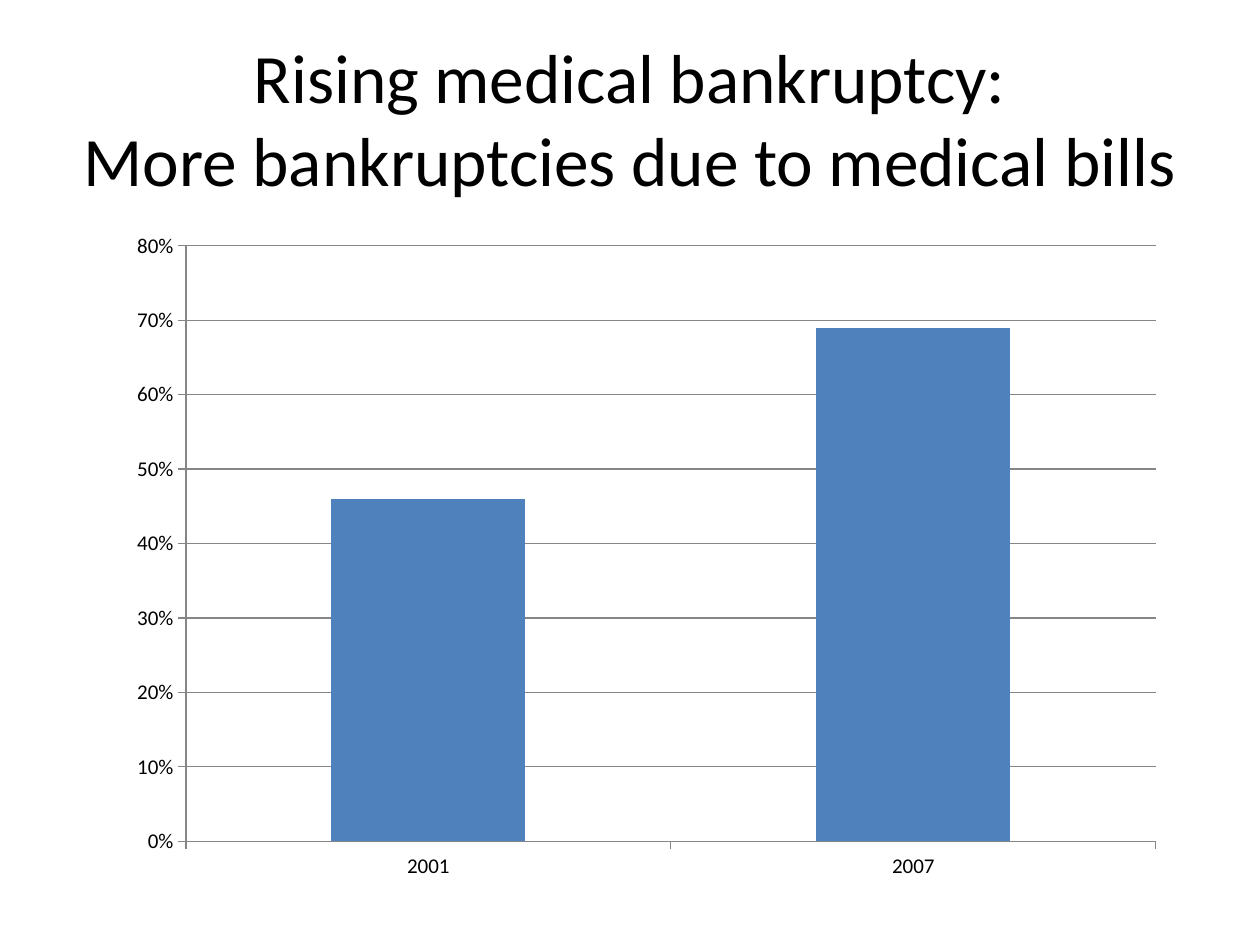
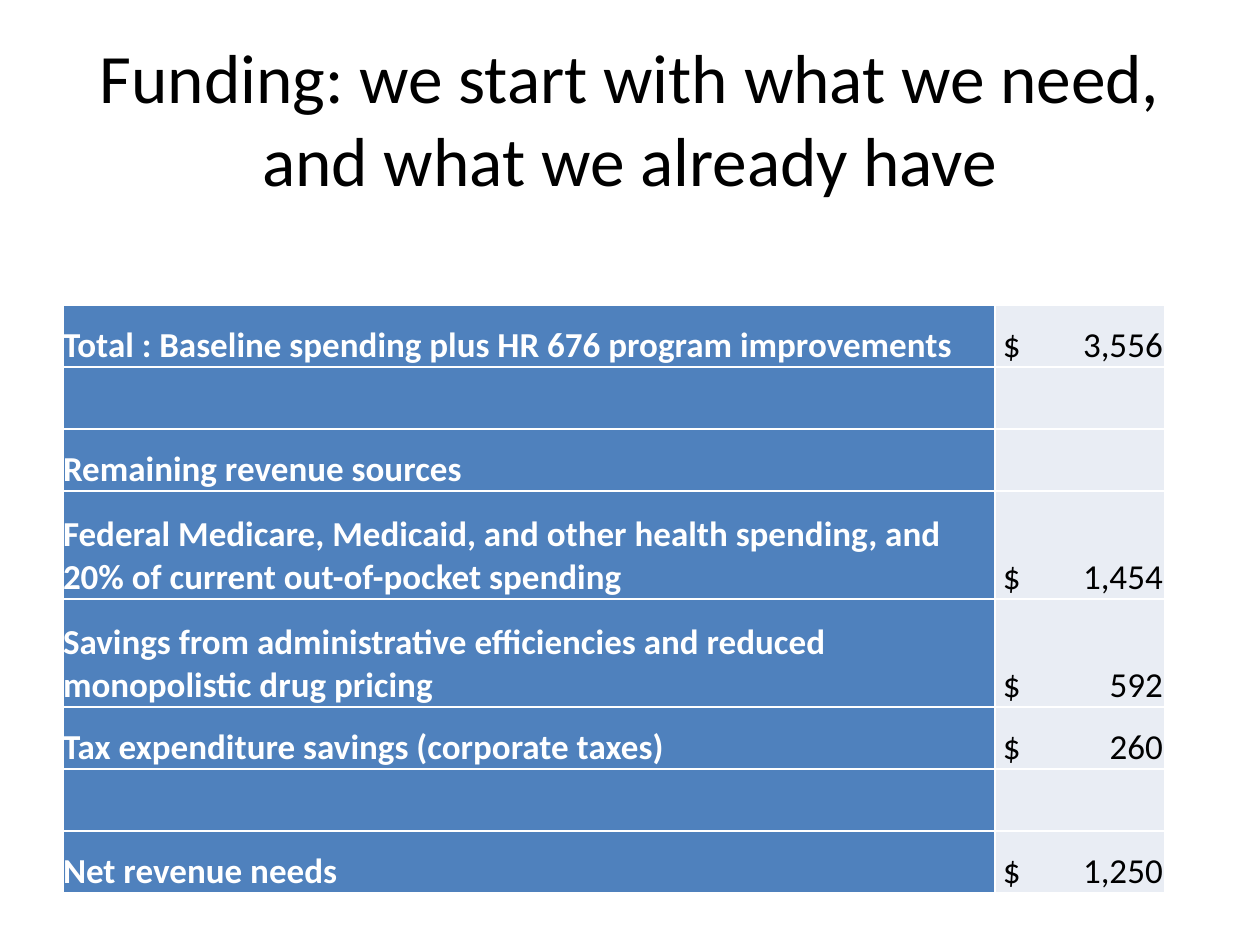
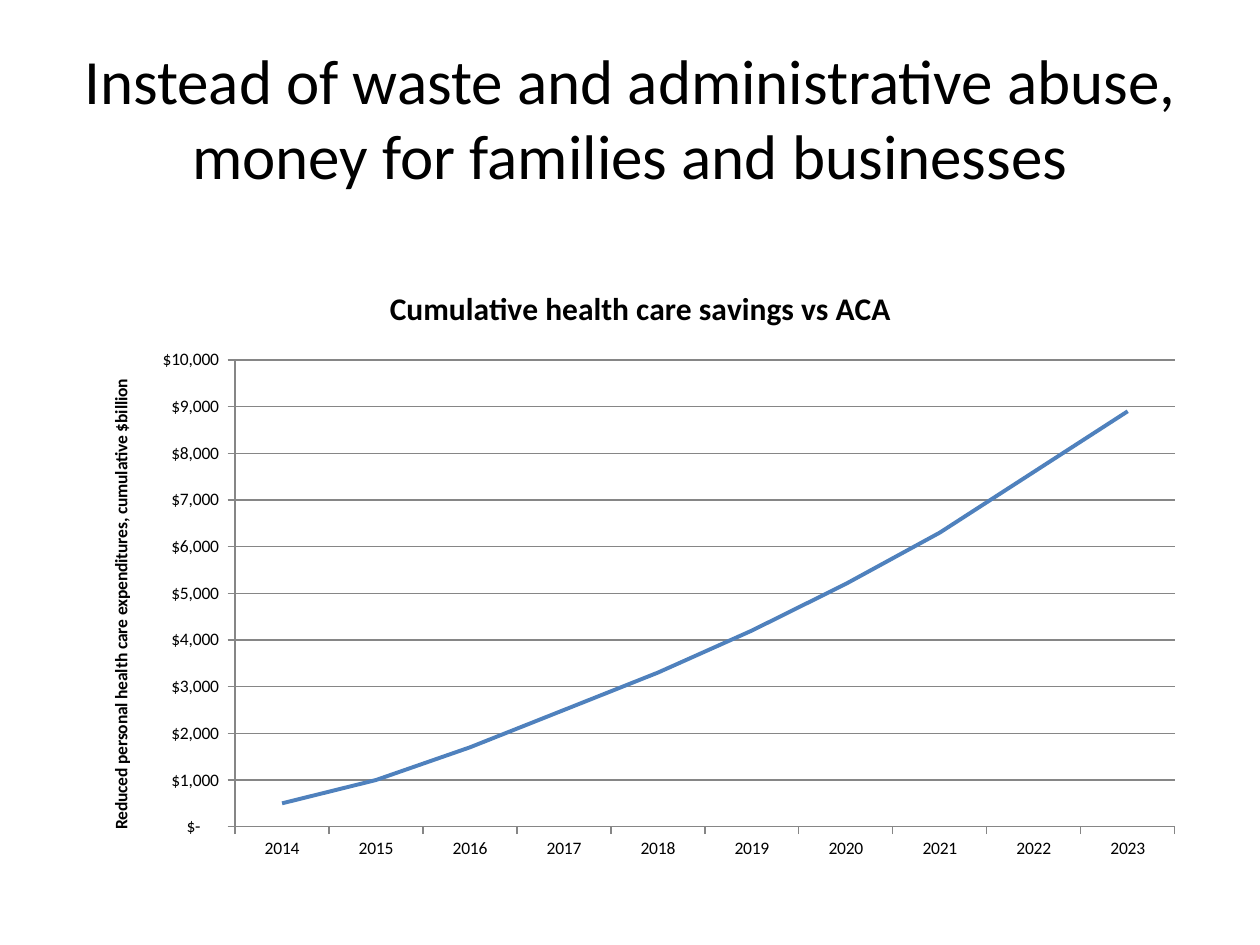
from lxml import etree
from pptx import Presentation
from pptx import util as u
from pptx.chart.data import CategoryChartData
from pptx.dml.color import RGBColor
from pptx.enum import chart as kinds
from pptx.enum import text
from pptx.oxml.ns import qn

BLACK = RGBColor(0, 0, 0)
WHITE = RGBColor(255, 255, 255)
BLUE = RGBColor(0x4F, 0x81, 0xBD)
PALE = RGBColor(0xE9, 0xED, 0xF4)
GRAY = RGBColor(0x86, 0x86, 0x86)
FACE = "Calibri"
DOLLARS = '_("$"* #,##0_);_("$"* \\(#,##0\\);_("$"* "-"??_);_(@_)'


def px(*nums):
    """Lengths at 126 px to the inch, as a list of EMU."""
    return [u.Emu(round(n * 914400 / 126)) for n in nums]


def style(font, size, color=BLACK, bold=False):
    looks = {"name": FACE, "size": u.Pt(size), "bold": bold}
    for key, val in looks.items():
        setattr(font, key, val)
    font.color.rgb = color


deck = Presentation()
deck.slide_width, deck.slide_height = px(1260, 945)

# Titles
heads = [
    ("Rising medical bankruptcy:\vMore bankruptcies due to medical bills", 39.6),
    ("Funding: we start with what we need, and what we already have", 39.6),
    ("Instead of waste and administrative abuse, money for families and businesses", 36),
]
pages = []
for words, size in heads:
    page = deck.slides.add_slide(deck.slide_layouts[5])
    title = page.shapes.title
    title.left, title.top, title.width, title.height = px(63, 38, 1134, 158)
    frame = title.text_frame
    frame.text = words
    frame.auto_size = text.MSO_AUTO_SIZE.NONE
    frame.vertical_anchor = text.MSO_ANCHOR.MIDDLE
    para = frame.paragraphs[0]
    para.alignment = text.PP_ALIGN.CENTER
    for run in para.runs:
        style(run.font, size)
    pages.append(page)
debt, funds, saved = pages

# Charts
saving = "Cumulative health care savings vs ACA"
plans = [
    dict(page=debt, kind=kinds.XL_CHART_TYPE.COLUMN_CLUSTERED,
         box=(116, 220, 1061, 672), name="Series 1", years=(2001, 2007),
         vals=(0.46, 0.69), form="0%", size=12, top=0.8, step=0.1),
    dict(page=saved, kind=kinds.XL_CHART_TYPE.LINE,
         box=(84, 262, 1113, 609), name=saving, years=range(2014, 2024),
         vals=(500, 1000, 1700, 2500, 3300, 4200, 5200, 6300, 7600, 8900),
         form=DOLLARS, size=10, top=10000, step=1000),
]
charts = []
for plan in plans:
    data = CategoryChartData()
    data.categories = [str(year) for year in plan["years"]]
    data.add_series(plan["name"], plan["vals"])
    chart = plan["page"].shapes.add_chart(plan["kind"], *px(*plan["box"]), data).chart
    style(chart.font, 10)
    chart.has_legend = chart.has_title = False
    chart.plots[0].vary_by_categories = False
    cats, axis = chart.category_axis, chart.value_axis
    scale = {"minimum_scale": 0, "maximum_scale": plan["top"],
             "major_unit": plan["step"], "has_major_gridlines": True}
    for key, val in scale.items():
        setattr(axis, key, val)
    axis.tick_labels.number_format = plan["form"]
    axis.tick_labels.number_format_is_linked = False
    for side in (cats, axis):
        side.major_tick_mark = kinds.XL_TICK_MARK.OUTSIDE
        side.minor_tick_mark = kinds.XL_TICK_MARK.NONE
        style(side.tick_labels.font, plan["size"])
    for rule in (cats.format.line, axis.format.line, axis.major_gridlines.format.line):
        rule.color.rgb = GRAY
        rule.width = u.Pt(0.75)
    charts.append(chart)
bars, trend = charts

bars.plots[0].gap_width = 150
fill = bars.series[0].format.fill
fill.solid()
fill.fore_color.rgb = BLUE

curve = trend.series[0]
curve.smooth = False
curve.format.line.color.rgb = BLUE
curve.format.line.width = u.Pt(2.25)
labels = [
    (trend.chart_title, saving, 18),
    (trend.value_axis.axis_title,
     "Reduced personal health care expenditures, cumulative $billion", 10),
]
for label, words, size in labels:
    label.text_frame.text = words
    style(label.text_frame.paragraphs[0].runs[0].font, size, bold=True)

# Funding table
items = [
    ("Total : Baseline spending plus HR 676 program improvements", "3,556"),
    ("", ""),
    ("Remaining revenue sources", ""),
    ("Federal Medicare, Medicaid, and other health spending, "
     "and 20% of current out-of-pocket spending", "1,454"),
    ("Savings from administrative efficiencies and reduced "
     "monopolistic drug pricing", "592"),
    ("Tax expenditure savings (corporate taxes)", "260"),
    ("", ""),
    ("Net revenue needs", "1,250"),
]
TALL = (3, 4)
grid = funds.shapes.add_table(len(items), 2, *px(63, 305, 1102, 588)).table
grid.first_row = grid.horz_banding = False
for col, width in zip(grid.columns, px(932, 170)):
    col.width = width
for i, (item, sum_) in enumerate(items):
    grid.rows[i].height = px(108 if i in TALL else 62)[0]
    cells = [(item, BLUE, WHITE, True, 0),
             (f"$\t{sum_}" if sum_ else "", PALE, BLACK, False, 8)]
    for j, (words, back, ink, bold, inset) in enumerate(cells):
        cell = grid.cell(i, j)
        cell.fill.solid()
        cell.fill.fore_color.rgb = back
        cell.vertical_anchor = text.MSO_ANCHOR.BOTTOM
        cell.margin_left = px(inset)[0]
        cell.margin_top = cell.margin_right = cell.margin_bottom = 0
        if not words:
            continue
        para = cell.text_frame.paragraphs[0]
        run = para.add_run()
        run.text = words
        style(run.font, 20, ink, bold)
        if j == 1:
            tabs = etree.SubElement(para._p.get_or_add_pPr(), qn("a:tabLst"))
            etree.SubElement(tabs, qn("a:tab"), pos=str(px(160)[0]), algn="r")

deck.save("out.pptx")
